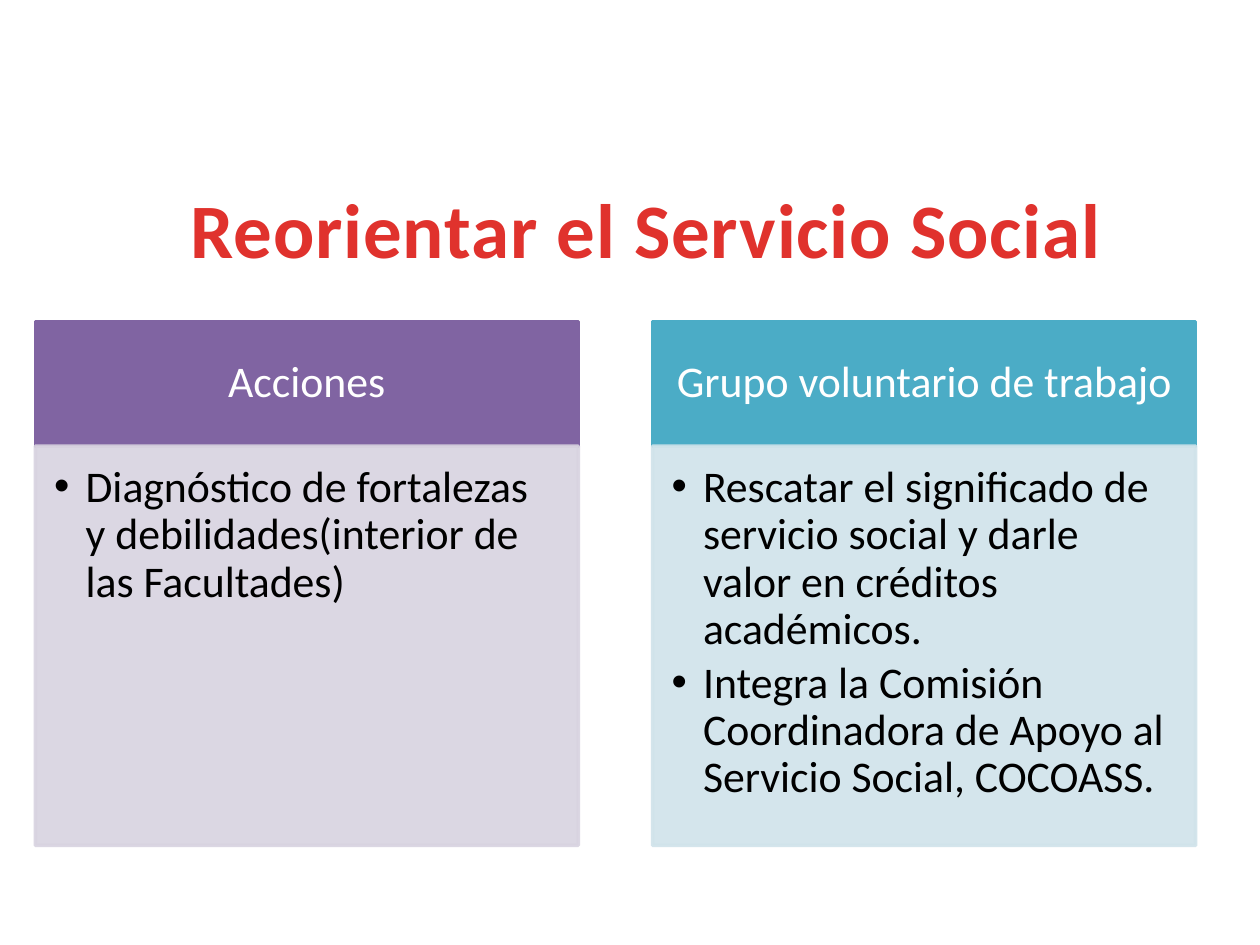
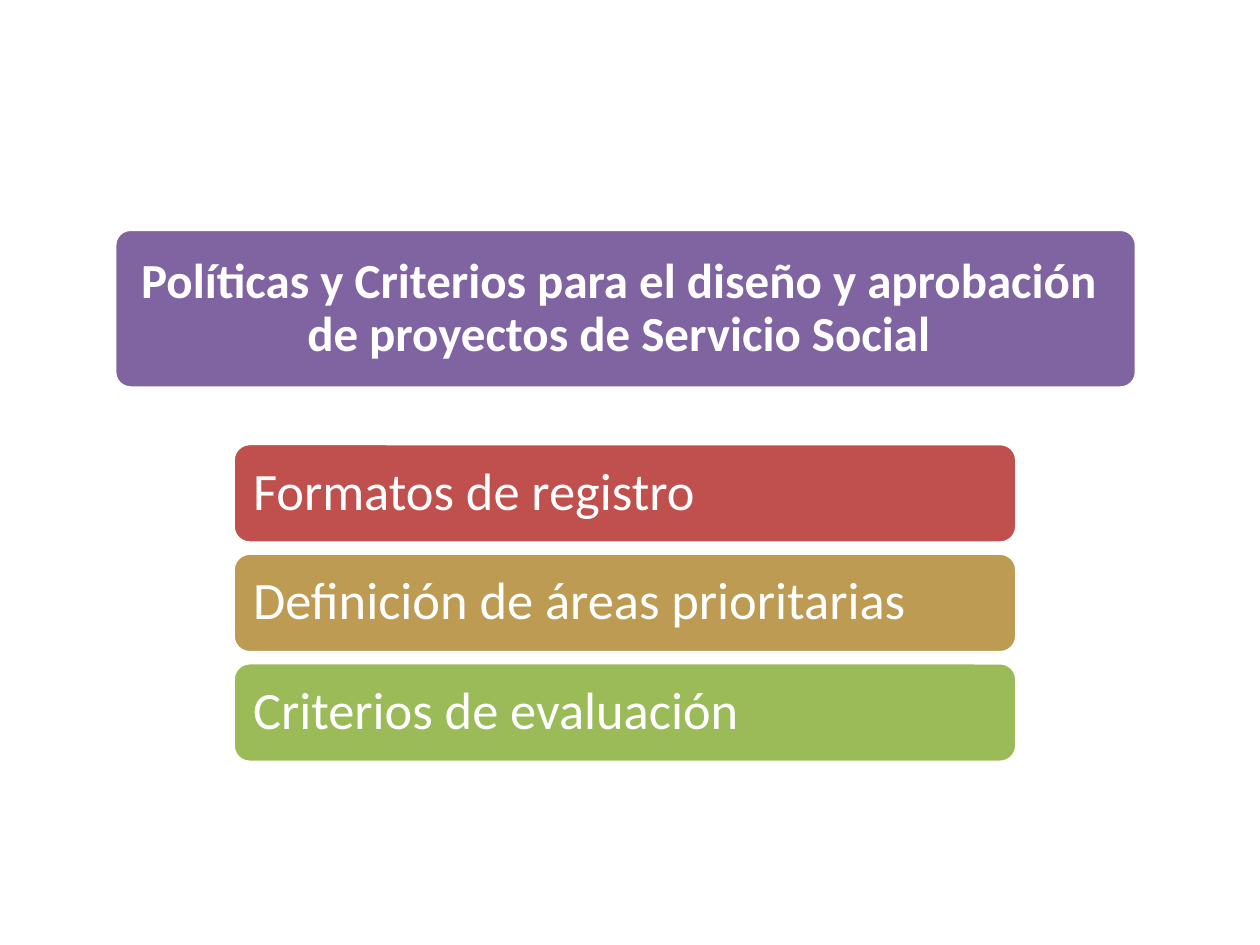
from pptx import Presentation
from pptx.dml.color import RGBColor
from pptx.enum.shapes import MSO_SHAPE as SHAPE
from pptx.enum.text import MSO_ANCHOR as ANCHOR, MSO_AUTO_SIZE as AUTO, PP_ALIGN as ALIGN
from pptx.oxml.ns import qn
from pptx.util import Inches, Pt
from lxml import etree

# Shared colours and formats
WHITE = RGBColor(0xFF, 0xFF, 0xFF)
BLACK = RGBColor(0x00, 0x00, 0x00)
TITLE_RED = RGBColor(0xE0, 0x32, 0x2D)
PURPLE = RGBColor(0x80, 0x64, 0xA2)
PALE_PURPLE = RGBColor(0xD8, 0xD3, 0xE0)
TEAL = RGBColor(0x4B, 0xAC, 0xC6)
PALE_TEAL = RGBColor(0xD0, 0xE3, 0xEA)
RED = RGBColor(0xC0, 0x50, 0x4D)
OCHRE = RGBColor(0xBD, 0x9B, 0x53)
GREEN = RGBColor(0x9B, 0xBB, 0x59)

FONT = "Calibri"
COMPARISON, TITLE_ONLY = 4, 5
TITLE_FONT = {"size": Pt(44), "bold": True}
BANNER_FONT = {"size": Pt(28), "bold": True}
COLUMN_FONT = {"size": Pt(25), "bold": False}
ROW_FONT = {"size": Pt(30), "bold": False}
PARAGRAPH = {"line_spacing": 0.9, "space_before": Pt(0)}


def place(sp, left, top, width, height):
    box = {"left": left, "top": top, "width": width, "height": height}
    for name, value in box.items():
        setattr(sp, name, Inches(value))


def paint(sp, fill, line, alpha=None):
    sp.fill.solid()
    sp.fill.fore_color.rgb = fill
    sp.line.color.rgb = line
    sp.line.width = Pt(2)
    if alpha:
        for color in sp._element.spPr.iter(qn("a:srgbClr")):
            etree.SubElement(color, qn("a:alpha"), val=str(alpha * 1000))


def write(sp, lines, font, color, align, anchor, insets, gap=0):
    """Fill a shape with formatted paragraphs; insets are left, top, right, bottom."""
    tf = sp.text_frame
    tf.word_wrap = True
    tf.auto_size = AUTO.NONE
    tf.vertical_anchor = anchor
    for side, inset in zip(("left", "top", "right", "bottom"), insets):
        setattr(tf, f"margin_{side}", Inches(inset))
    for i, line in enumerate(lines):
        p = tf.add_paragraph() if i else tf.paragraphs[0]
        for name, value in PARAGRAPH.items():
            setattr(p, name, value)
        p.alignment = align
        p.space_after = Pt(gap)
        r = p.add_run()
        r.text = line
        r.font.name = FONT
        r.font.color.rgb = color
        for name, value in font.items():
            setattr(r.font, name, value)


def set_bullets(sp):
    for p in sp.text_frame.paragraphs:
        pPr = p._p.get_or_add_pPr()
        pPr.set("marL", str(Inches(0.25)))
        pPr.set("indent", str(-Inches(0.25)))
        etree.SubElement(pPr, qn("a:buFont"), typeface="Arial")
        etree.SubElement(pPr, qn("a:buChar"), char="•")


def add_column(header, body, left, heading, items, color, pale):
    place(header, left, 2.55, 4.31, 0.99)
    paint(header, color, color)
    write(header, [heading], COLUMN_FONT, WHITE, ALIGN.CENTER, ANCHOR.MIDDLE,
          (0.19, 0.11, 0.19, 0.11))
    place(body, left, 3.54, 4.31, 3.17)
    paint(body, pale, pale, alpha=90)
    write(body, items, COLUMN_FONT, BLACK, ALIGN.LEFT, ANCHOR.TOP,
          (0.15, 0.15, 0.19, 0.22), gap=3.75)
    set_bullets(body)


def add_round_box(slide, left, top, width, height, color):
    sp = slide.shapes.add_shape(SHAPE.ROUNDED_RECTANGLE, Inches(left), Inches(top),
                                Inches(width), Inches(height))
    sp.shadow.inherit = False
    paint(sp, color, WHITE)
    return sp


def build_reorientation(prs):
    slide = prs.slides.add_slide(prs.slide_layouts[COMPARISON])
    title = slide.shapes.title
    place(title, 1.13, 1.39, 8, 0.84)
    write(title, ["Reorientar el Servicio Social"], TITLE_FONT, TITLE_RED,
          ALIGN.CENTER, ANCHOR.MIDDLE, (0.1, 0.05, 0.1, 0.05))
    title.text_frame.paragraphs[0].line_spacing = 1.0
    title.text_frame.paragraphs[0].runs[0].font._element.set("spc", "50")

    # Two columns, each a heading over a list
    columns = [
        ("Acciones",
         ["Diagnóstico de fortalezas y debilidades(interior de las Facultades)"],
         PURPLE, PALE_PURPLE),
        ("Grupo voluntario de trabajo",
         ["Rescatar el significado de servicio social y darle valor en créditos académicos.",
          "Integra la Comisión Coordinadora de Apoyo al Servicio Social, COCOASS."],
         TEAL, PALE_TEAL),
    ]
    holders = list(slide.placeholders)[1:]
    for i, column in enumerate(columns):
        add_column(holders[2 * i], holders[2 * i + 1], 0.28 + 4.9 * i, *column)


def build_policies(prs):
    slide = prs.slides.add_slide(prs.slide_layouts[TITLE_ONLY])

    # Title on a rounded banner, which goes behind it
    banner = add_round_box(slide, 0.91, 1.82, 8.11, 1.26, PURPLE)
    banner.adjustments[0] = 0.1
    title = slide.shapes.title
    title._element.addprevious(banner._element)
    place(title, 0.94, 1.86, 7.94, 1.19)
    write(title,
          ["Políticas y Criterios para el diseño y aprobación de proyectos de Servicio Social"],
          BANNER_FONT, WHITE, ALIGN.CENTER, ANCHOR.MIDDLE, (0.08,) * 4)

    # Rows at an equal step
    rows = [
        ("Formatos de registro", RED),
        ("Definición de áreas prioritarias", OCHRE),
        ("Criterios de evaluación", GREEN),
    ]
    for i, (label, color) in enumerate(rows):
        row = add_round_box(slide, 1.85, 3.52 + 0.87 * i, 6.22, 0.79, color)
        write(row, [label], ROW_FONT, WHITE, ALIGN.LEFT, ANCHOR.MIDDLE,
              (0.12, 0.12, 0.12, 0.12))


def main():
    prs = Presentation()
    prs.slide_width, prs.slide_height = Inches(10), Inches(7.5)
    build_reorientation(prs)
    build_policies(prs)
    prs.save("out.pptx")


if __name__ == "__main__":
    main()
